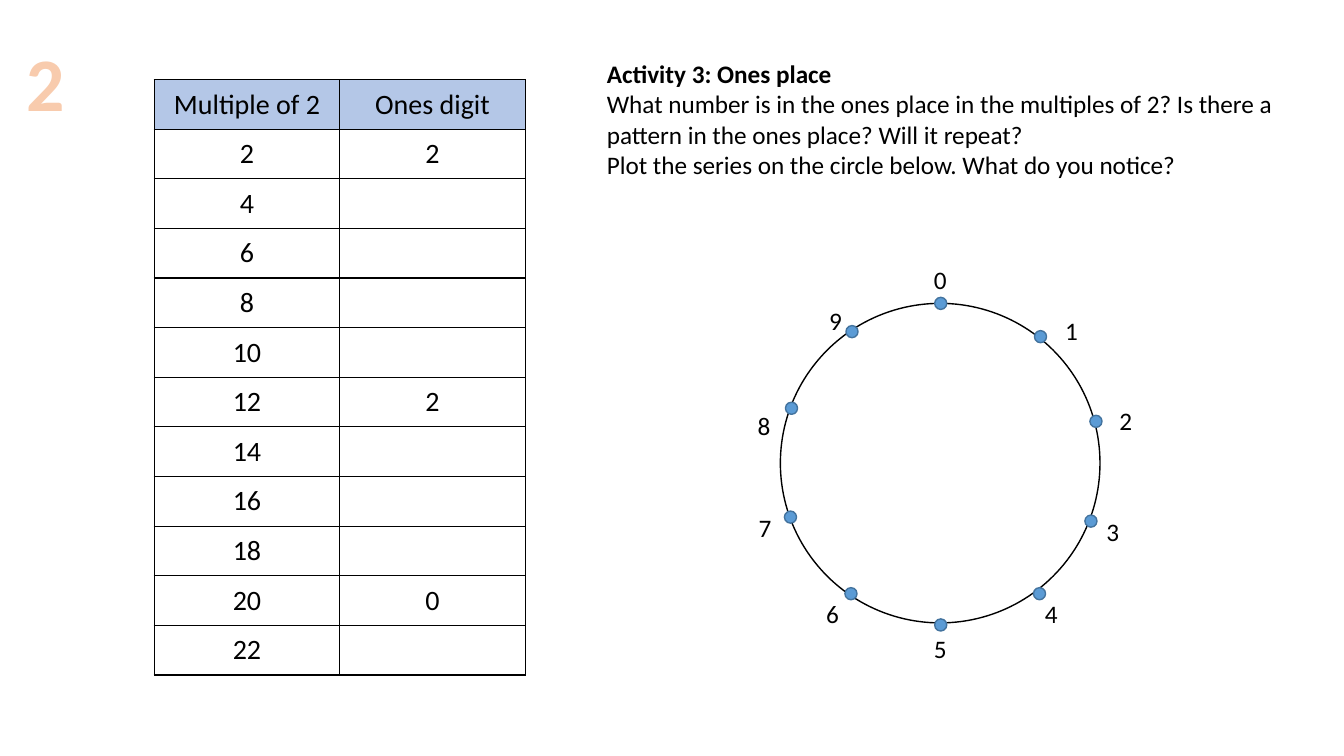
from lxml import etree
from pptx import Presentation
from pptx.dml.color import RGBColor
from pptx.enum.shapes import MSO_SHAPE
from pptx.enum.text import MSO_ANCHOR, MSO_AUTO_SIZE, PP_ALIGN
from pptx.oxml.ns import qn
from pptx.util import Inches, Pt

OVAL = MSO_SHAPE.OVAL
MIDDLE = MSO_ANCHOR.MIDDLE
CENTER = PP_ALIGN.CENTER
FIT = MSO_AUTO_SIZE.SHAPE_TO_FIT_TEXT

FONT = "Calibri"
COLORS = {
    "ink": "000000",
    "head": "B4C7E7",
    "dot": "5B9BD5",
    "rim": "43739E",
    "badge": "F8CBAD",
    "edge": "ED7D31",
}
ONES = {2: "2", 12: "2", 20: "0"}
# For each digit: centre of its dot, then of its label, from the ring's corner
MARKS = [
    (1.59, 0, 1.59, -0.24),
    (2.58, 0.33, 2.89, 0.27),
    (3.13, 1.17, 3.43, 1.16),
    (3.08, 2.16, 3.3, 2.26),
    (2.57, 2.88, 2.69, 3.08),
    (1.59, 3.19, 1.59, 3.42),
    (0.7, 2.88, 0.52, 3.08),
    (0.1, 2.12, -0.15, 2.22),
    (0.11, 1.04, -0.16, 1.21),
    (0.71, 0.28, 0.55, 0.17),
]


def rgb(name):
    return RGBColor.from_string(COLORS[name])


def style(para, size, color="ink", bold=False):
    for run in para.runs:
        font = run.font
        font.name, font.size, font.bold = FONT, Pt(size), bold
        font.color.rgb = rgb(color)


def add_text(slide, box, text, size, color="ink", bold=False, wrap=False):
    frame = slide.shapes.add_textbox(*map(Inches, box)).text_frame
    frame.word_wrap = wrap
    frame.auto_size = FIT
    frame.text = text
    for para in frame.paragraphs:
        style(para, size, color, bold)
    return frame


def add_line(parent, tag, color, width):
    """Put a solid line element first in a cell's or run's properties."""
    line = etree.Element(qn(tag), w=str(Pt(width)))
    fill = etree.SubElement(line, qn("a:solidFill"))
    etree.SubElement(fill, qn("a:srgbClr"), val=COLORS[color])
    parent.insert(0, line)


def add_oval(slide, box, line, fill=None):
    oval = slide.shapes.add_shape(OVAL, *map(Inches, box))
    oval.shadow.inherit = False
    oval.line.color.rgb = rgb(line)
    oval.line.width = Pt(1)
    if fill:
        oval.fill.solid()
        oval.fill.fore_color.rgb = rgb(fill)
    else:
        oval.fill.background()


def add_badge(slide, box):
    frame = add_text(slide, box, "2", 54, "badge", True)
    para = frame.paragraphs[0]
    para.alignment = CENTER
    add_line(para.runs[0].font._element, "a:ln", "edge", 1.75)


def fill_cell(cell, text, head):
    cell.text = text
    cell.vertical_anchor = MIDDLE
    para = cell.text_frame.paragraphs[0]
    para.alignment = CENTER
    style(para, 20)
    props = cell._tc.get_or_add_tcPr()
    for side in "BTRL":
        add_line(props, "a:ln" + side, "ink", 1)
    if head:
        cell.fill.solid()
        cell.fill.fore_color.rgb = rgb("head")
    else:
        cell.fill.background()


def add_multiples(slide, box):
    rows = [("Multiple of 2", "Ones digit")]
    rows += [(str(n), ONES.get(n, "")) for n in range(2, 23, 2)]
    table = slide.shapes.add_table(len(rows), 2, *map(Inches, box)).table
    table.horz_banding = table.first_row = False
    for r, row in enumerate(rows):
        for c, text in enumerate(row):
            fill_cell(table.cell(r, c), text, r == 0)


def add_task(slide, box):
    text = "\n".join([
        "Activity 3: Ones place",
        "What number is in the ones place in the multiples of 2? "
        "Is there a pattern in the ones place? Will it repeat?",
        "Plot the series on the circle below. What do you notice?",
    ])
    frame = add_text(slide, box, text, 18, wrap=True)
    style(frame.paragraphs[0], 18, bold=True)


def add_ring(slide, box):
    """Draw the circle with a dot and a label for each digit."""
    left, top = box[:2]
    dot, wide, high = 0.12, 0.33, 0.4
    add_oval(slide, box, "ink")
    for digit, (x, y, tx, ty) in enumerate(MARKS):
        spot = (left + x - dot / 2, top + y - dot / 2, dot, dot)
        add_oval(slide, spot, "rim", "dot")
        label = (left + tx - wide / 2, top + ty - high / 2, wide, high)
        add_text(slide, label, str(digit), 18)


def main():
    deck = Presentation()
    deck.slide_width, deck.slide_height = Inches(13.33), Inches(7.5)
    slide = deck.slides.add_slide(deck.slide_layouts[6])
    add_multiples(slide, (1.53, 0.79, 3.68, 5.91))
    add_task(slide, (5.92, 0.53, 7.22, 1.31))
    add_ring(slide, (7.74, 3.01, 3.17, 3.17))
    add_badge(slide, (0.16, 0.31, 0.59, 1.01))
    deck.save("out.pptx")


if __name__ == "__main__":
    main()
